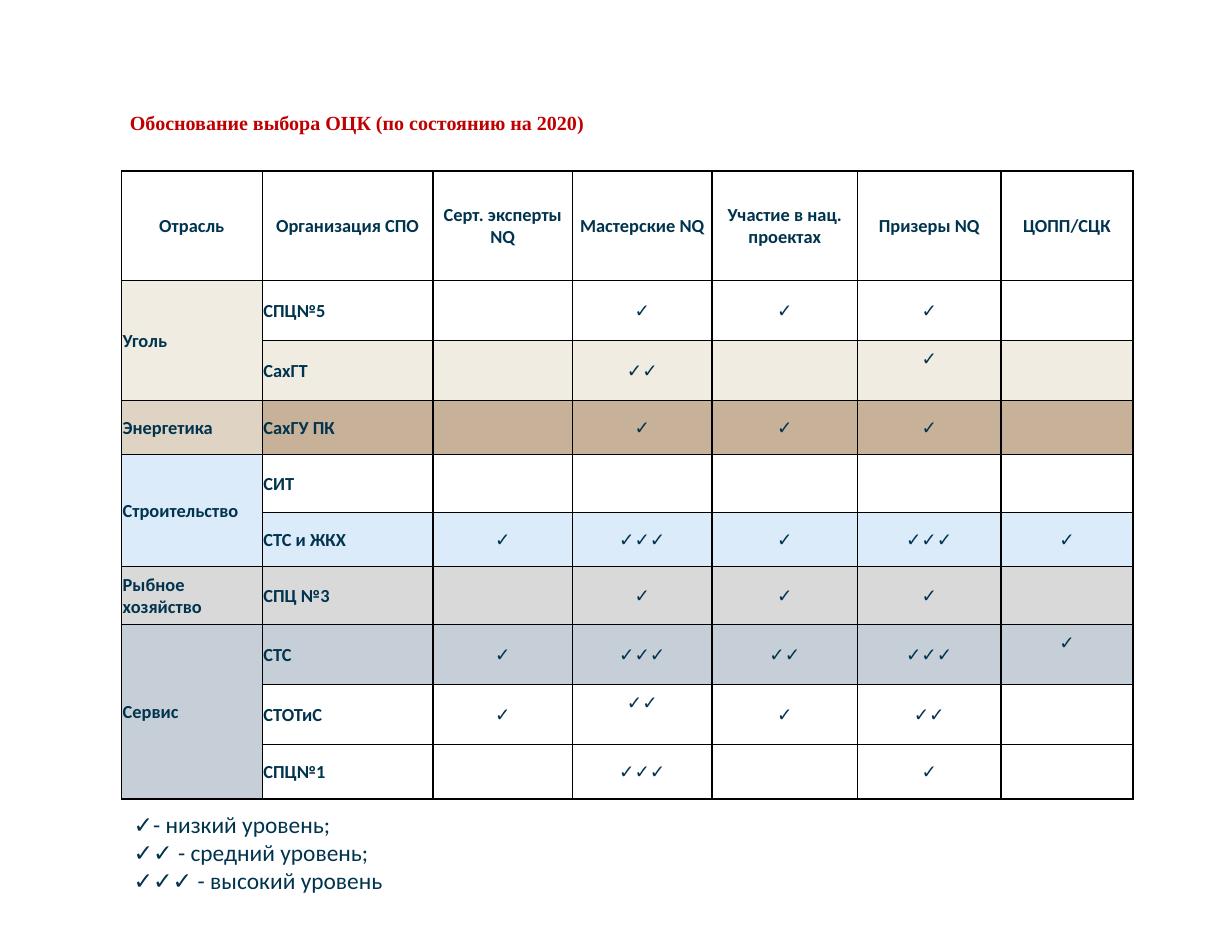
from lxml import etree
from pptx import Presentation, util as u
from pptx.dml.color import RGBColor
from pptx.enum import text
from pptx.oxml.ns import qn

# The slide is a grid of 1024 columns and 788 rows.
CELL = u.Inches(0.01)
WIDE, HIGH = 1024, 788
LEFT = 101

HUES = {
    "ink": "00334E", "title": "C00000", "line": "000000", "plain": "FFFFFF",
    "coal": "F0ECE2", "power": "DFD3C3", "brown": "C7B198",
    "build": "DBEBFA", "fish": "D9D9D9", "care": "C6CFD8",
}
TICK = "✓"
COLS = [117, 142, 116, 116, 121, 119, 110]
ROWS = [91, 50, 50, 45, 48, 45, 48, 50, 50, 45]
HEADS = ["Отрасль", "Организация СПО", "Серт. эксперты NQ", "Мастерские NQ",
         "Участие в нац. проектах", "Призеры NQ", "ЦОПП/СЦК"]
# Sector, its hue, then each school with its row hue and tick counts.
SECTORS = [
    ("Уголь", "coal", [("СПЦ№5", "plain", [0, 1, 1, 1, 0]),
                       ("СахГТ", "coal", [0, 2, 0, 1, 0])]),
    ("Энергетика", "power", [("СахГУ ПК", "brown", [0, 1, 1, 1, 0])]),
    ("Строительство", "build", [("СИТ", "plain", [0, 0, 0, 0, 0]),
                                ("СТС и ЖКХ", "build", [1, 3, 1, 3, 1])]),
    ("Рыбное хозяйство", "fish", [("СПЦ №3", "fish", [0, 1, 1, 1, 0])]),
    ("Сервис", "care", [("СТС", "care", [1, 3, 2, 3, 1]),
                        ("СТОТиС", "plain", [1, 2, 1, 2, 0]),
                        ("СПЦ№1", "plain", [0, 3, 0, 1, 0])]),
]
RAISED = {("СахГТ", 3), ("СТС", 4), ("СТОТиС", 1)}
LEVELS = ["- низкий уровень;", " - средний уровень;", " - высокий уровень"]


def style(frame, size, hue="ink", face="Calibri", bold=False, align="LEFT"):
    for para in frame.paragraphs:
        para.alignment = getattr(text.PP_ALIGN, align)
        for run in para.runs:
            font = run.font
            font.name, font.size, font.bold = face, u.Pt(size), bold
            font.color.rgb = RGBColor.from_string(HUES[hue])


def place(shape, left, top, width, height):
    shape.left, shape.top = left * CELL, top * CELL
    shape.width, shape.height = width * CELL, height * CELL
    frame = shape.text_frame
    frame.word_wrap = True
    frame.auto_size = text.MSO_AUTO_SIZE.NONE
    frame.vertical_anchor = text.MSO_ANCHOR.TOP
    return frame


def add_title(shape):
    frame = place(shape, 98, 87, 889, 30)
    frame.text = "Обоснование выбора ОЦК (по состоянию на 2020)"
    style(frame, 12, "title", "Times New Roman", True)


def add_legend(shape):
    frame = place(shape, LEFT, 668, 776, 81)
    frame.text = "\n".join(TICK * n + level for n, level in enumerate(LEVELS, 1))
    style(frame, 14)
    for para in frame.paragraphs:
        para.space_before = u.Pt(0)
        props = para._p.get_or_add_pPr()
        props.set("marL", "0")
        props.set("indent", "0")
        etree.SubElement(props, qn("a:buNone"))


def frame_cell(cell):
    """Draw a thin line on all four sides; call before filling the cell."""
    props = cell._tc.get_or_add_tcPr()
    for side in "LRTB":
        line = etree.SubElement(props, qn("a:ln" + side), w=str(u.Pt(1)))
        fill = etree.SubElement(line, qn("a:solidFill"))
        etree.SubElement(fill, qn("a:srgbClr"), val=HUES["line"])


def fill_cell(cell, words, hue="plain", bold=True, align="LEFT", lift=0):
    """Set a cell's text and fill; lift is the space kept below the text."""
    cell.margin_left = cell.margin_right = cell.margin_top = CELL
    cell.margin_bottom = lift * CELL
    cell.vertical_anchor = text.MSO_ANCHOR.MIDDLE
    cell.fill.solid()
    cell.fill.fore_color.rgb = RGBColor.from_string(HUES[hue])
    cell.text_frame.text = words
    style(cell.text_frame, 11, bold=bold, align=align)


def add_grid(slide):
    grid = slide.shapes.add_table(
        len(ROWS), len(COLS), LEFT * CELL, 142 * CELL,
        sum(COLS) * CELL, sum(ROWS) * CELL).table
    grid.first_row = grid.horz_banding = False
    for col, width in zip(grid.columns, COLS):
        col.width = width * CELL
    for row, height in zip(grid.rows, ROWS):
        row.height = height * CELL
    for cell in grid.iter_cells():
        frame_cell(cell)
    for col, head in enumerate(HEADS):
        fill_cell(grid.cell(0, col), head, align="CENTER")

    row = 1
    for sector, hue, schools in SECTORS:
        first = grid.cell(row, 0)
        if len(schools) > 1:
            first.merge(grid.cell(row + len(schools) - 1, 0))
        fill_cell(first, sector, hue)
        for school, tint, marks in schools:
            fill_cell(grid.cell(row, 1), school, tint)
            for col, count in enumerate(marks):
                lift = 20 if (school, col) in RAISED else 0
                fill_cell(grid.cell(row, col + 2), TICK * count, tint,
                          False, "CENTER", lift)
            row += 1


def main():
    deck = Presentation()
    deck.slide_width, deck.slide_height = WIDE * CELL, HIGH * CELL
    slide = deck.slides.add_slide(deck.slide_layouts[1])
    add_title(slide.shapes.title)
    add_grid(slide)
    add_legend(slide.placeholders[1])
    deck.save("out.pptx")


if __name__ == "__main__":
    main()
